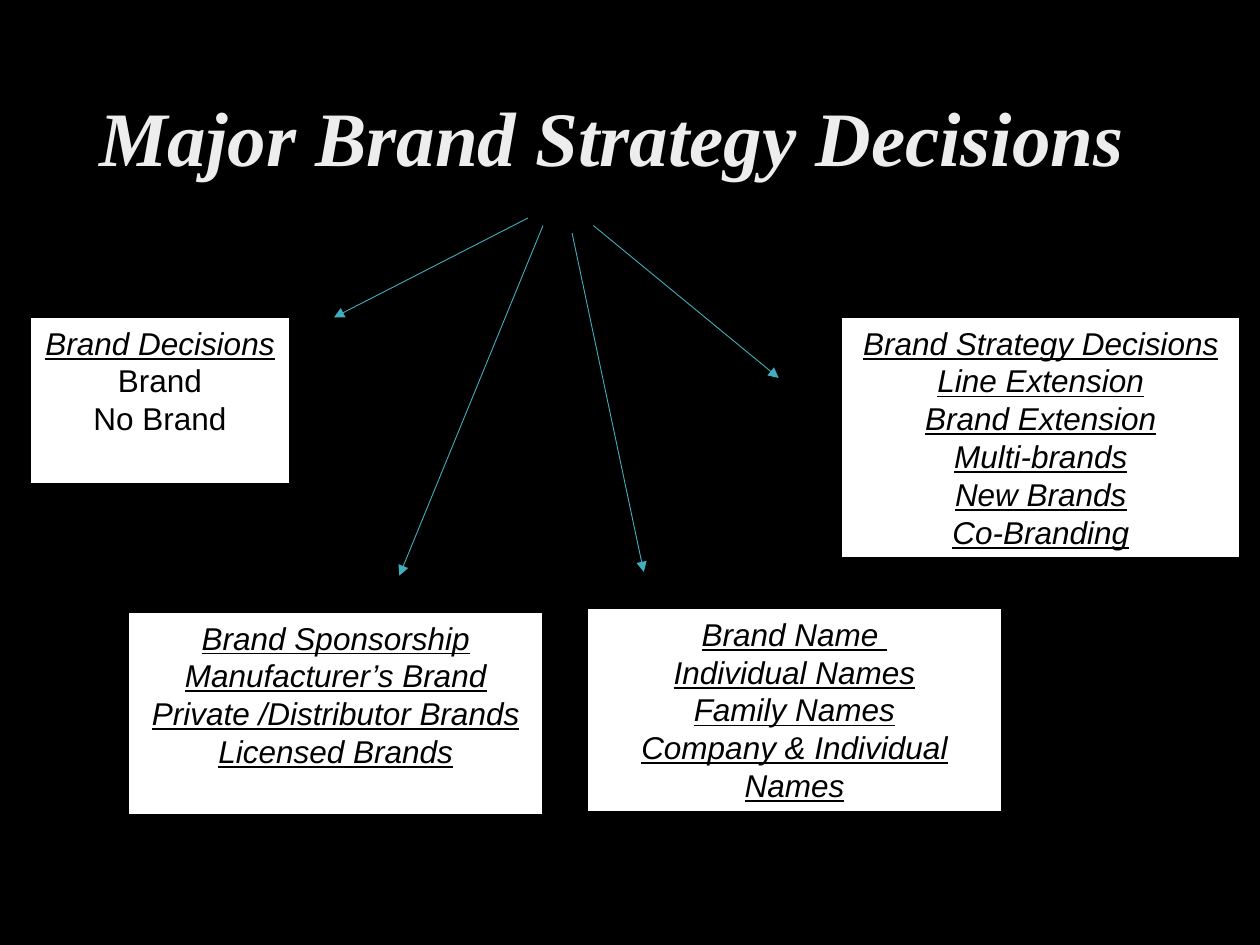
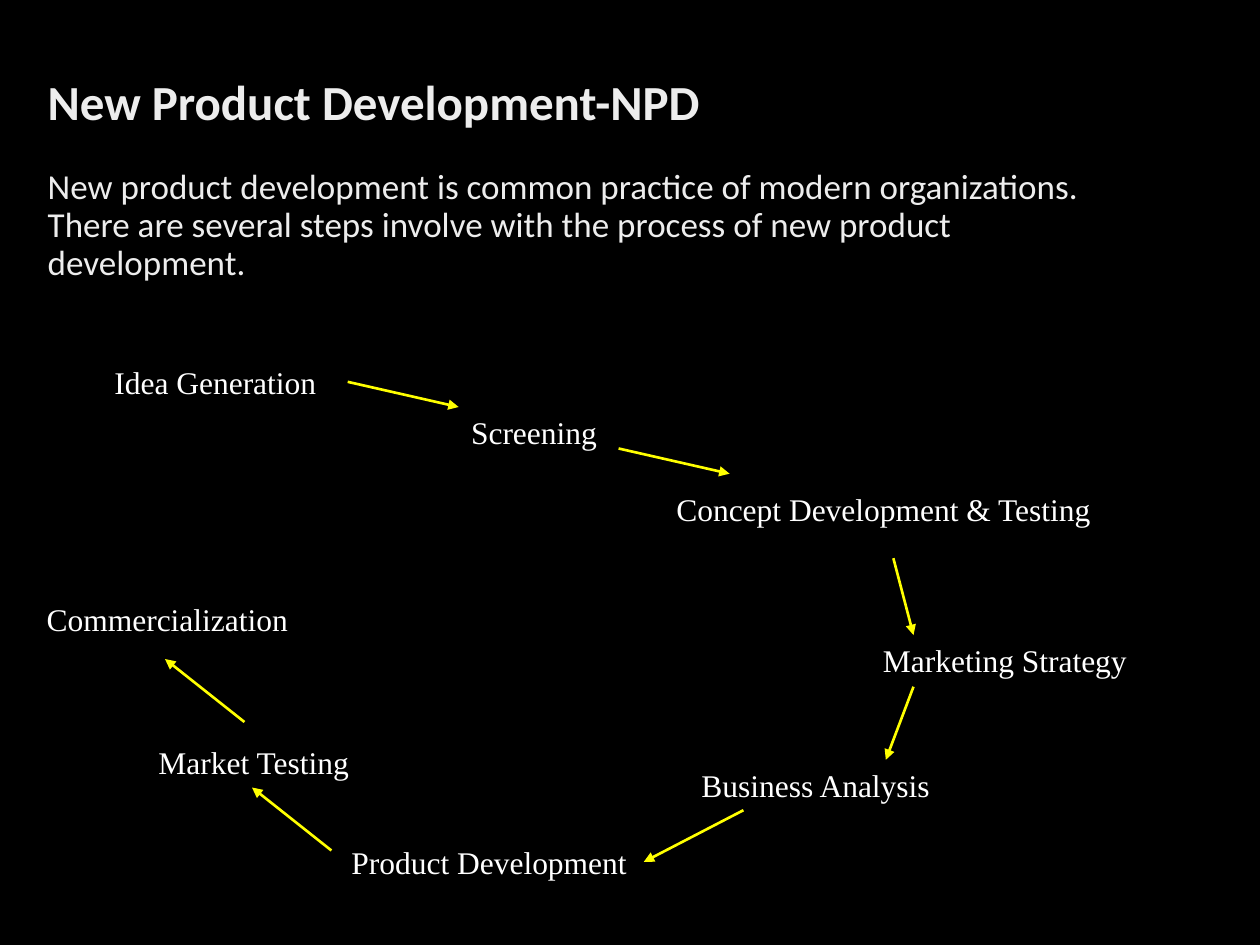
from lxml.etree import SubElement
from pptx import Presentation
from pptx.dml.color import RGBColor
from pptx.enum.shapes import MSO_CONNECTOR, MSO_SHAPE
from pptx.enum.text import MSO_ANCHOR, MSO_AUTO_SIZE, PP_ALIGN
from pptx.oxml.ns import qn
from pptx.util import Pt

# Colours and fonts
BLACK = RGBColor(0x00, 0x00, 0x00)
WHITE = RGBColor(0xFF, 0xFF, 0xFF)
PALE = RGBColor(0xED, 0xED, 0xED)
TEAL = RGBColor(0x41, 0xAE, 0xBD)
YELLOW = RGBColor(0xFF, 0xFF, 0x00)
SERIF, SANS, BODY = "Times New Roman", "Arial", "Calibri"

# Brand decisions: left, top, width, height, lines
CARDS = [
    (17.3, 181.4, 148.3, 95, ["Brand Decisions", "Brand", "No Brand"]),
    (335.5, 347.8, 236.9, 115.9,
     ["Brand Name ", "Individual Names", "Family Names",
      "Company & Individual Names"]),
    (73.4, 349.9, 236.9, 115.9,
     ["Brand Sponsorship", "Manufacturer’s Brand",
      "Private /Distributor Brands", "Licensed Brands"]),
    (481, 181.4, 227.5, 137.5,
     ["Brand Strategy Decisions", "Line Extension", "Brand Extension",
      "Multi-brands", "New Brands", "Co-Branding"]),
]
# Arrows: from x, from y, to x, to y
RAYS = [
    (301.7, 124.6, 190.8, 181.4),
    (310.3, 128.9, 228.2, 329),
    (326.9, 133.2, 367.9, 326.9),
    (339.1, 128.9, 445, 216),
]
# Development steps: left, top, width, name
STEPS = [
    (58.3, 203.8, 131, "Idea Generation"),
    (262.1, 232.6, 87.1, "Screening"),
    (379.4, 276.5, 253.4, "Concept Development & Testing"),
    (497.5, 362.9, 155.5, "Marketing Strategy"),
    (393.8, 434.2, 146.2, "Business Analysis"),
    (193.7, 478.1, 173.5, "Product Development"),
    (83.5, 421.2, 124.6, "Market Testing"),
    (19.6, 339.1, 154, "Commercialization"),
]
LINKS = [
    (198.7, 218.2, 262.1, 232.6),
    (353.5, 256.3, 416.9, 270.7),
    (510.5, 319, 522, 362.9),
    (522, 392.4, 506.2, 434.2),
    (424.8, 463, 367.9, 492.5),
    (189.4, 486, 144, 450),
    (139.7, 412.6, 94.3, 376.6),
]


def add_page(deck):
    page = deck.slides.add_slide(deck.slide_layouts[6])
    page.background.fill.solid()
    page.background.fill.fore_color.rgb = BLACK
    return page


def style(para, face, size, color, bold=False, slant=False, under=False):
    for run in para.runs:
        font = run.font
        font.name, font.size, font.color.rgb = face, Pt(size), color
        font.bold, font.italic, font.underline = bold, slant, under


def add_text(page, left, top, width, height, text, wrap=True):
    box = page.shapes.add_textbox(Pt(left), Pt(top), Pt(width), Pt(height))
    frame = box.text_frame
    frame.word_wrap = wrap
    frame.text = text
    return frame


def add_card(page, left, top, width, height, lines):
    card = page.shapes.add_shape(
        MSO_SHAPE.RECTANGLE, Pt(left), Pt(top), Pt(width), Pt(height))
    card.shadow.inherit = False
    card.fill.solid()
    card.fill.fore_color.rgb = WHITE
    card.line.color.rgb = BLACK
    card.line.width = Pt(0.75)
    frame = card.text_frame
    frame.vertical_anchor = MSO_ANCHOR.TOP
    frame.text = "\n".join(lines)
    for row, para in enumerate(frame.paragraphs):
        para.alignment = PP_ALIGN.CENTER
        # Under the first heading, the options are plain
        fancy = row == 0 or lines[0] != "Brand Decisions"
        style(para, SANS, 18, BLACK, slant=fancy, under=fancy)


def add_step(page, left, top, width, name):
    frame = add_text(page, left, top, width, 28.8, name, wrap=False)
    frame.auto_size = MSO_AUTO_SIZE.SHAPE_TO_FIT_TEXT
    style(frame.paragraphs[0], SERIF, 18, WHITE)


def add_arrow(page, ends, color, width):
    arrow = page.shapes.add_connector(
        MSO_CONNECTOR.STRAIGHT, *[Pt(end) for end in ends])
    arrow.line.color.rgb = color
    arrow.line.width = Pt(width)
    SubElement(arrow.line._get_or_add_ln(), qn("a:tailEnd"), type="triangle")
    SubElement(arrow._element.spPr, qn("a:effectLst"))


def brand_page(deck):
    page = add_page(deck)
    frame = add_text(page, 49.7, 28.8, 620.6, 104.4,
                     "Major Brand Strategy Decisions")
    frame.vertical_anchor = MSO_ANCHOR.MIDDLE
    title = frame.paragraphs[0]
    title.line_spacing = 0.9
    style(title, SERIF, 44, PALE, bold=True, slant=True)
    for card in CARDS:
        add_card(page, *card)
    for ends in RAYS:
        add_arrow(page, ends, TEAL, 0.5)


def product_page(deck):
    page = add_page(deck)
    frame = add_text(
        page, 20.2, 41, 643, 150,
        "New Product Development-NPD\n"
        "New product development is common practice of modern organizations. "
        "There are several steps involve with the process of new product "
        "development.")
    title, intro = frame.paragraphs
    title.line_spacing = intro.line_spacing = 0.9
    intro.space_before = Pt(22)
    style(title, BODY, 28, PALE, bold=True)
    style(intro, BODY, 20, PALE)
    for step in STEPS:
        add_step(page, *step)
    for ends in LINKS:
        add_arrow(page, ends, YELLOW, 1.5)


def main():
    deck = Presentation()
    deck.slide_width, deck.slide_height = Pt(720), Pt(540)
    brand_page(deck)
    product_page(deck)
    deck.save("out.pptx")


if __name__ == "__main__":
    main()
